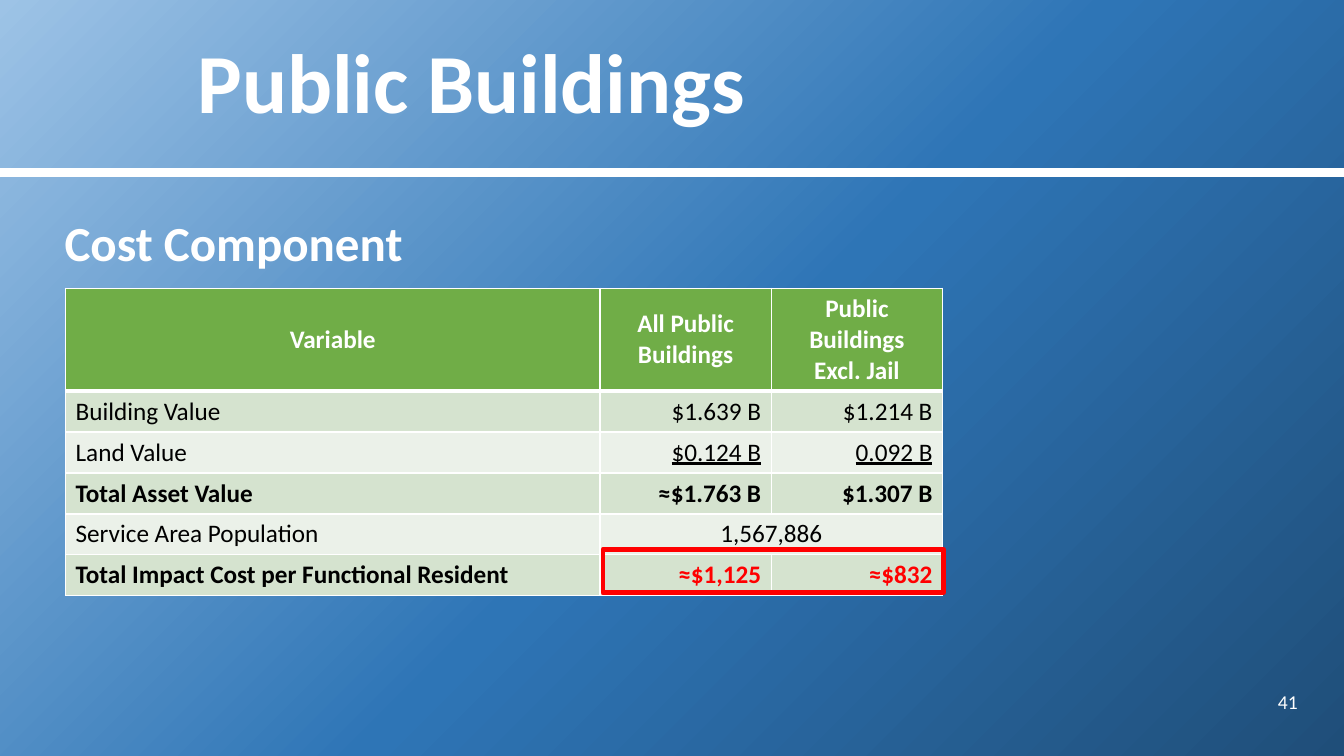
import pptx
import pptx.util
import pptx.oxml
import pptx.oxml.ns
import pptx.dml.color
import pptx.enum.shapes
import pptx.enum.text

Align = pptx.enum.text.PP_ALIGN
Anchor = pptx.enum.text.MSO_ANCHOR
Pt = pptx.util.Pt
NAMESPACES = pptx.oxml.ns.nsdecls("a")

COLORS = {
    "white": "FFFFFF", "black": "000000", "red": "FF0000",
    "header": "70AD47", "band_dark": "D5E3CF", "band_light": "EBF1E9",
    "sky": "9DC3E6", "blue": "2E75B6", "navy": "1F4E79",
}

COLUMN_SHARES = [39.76, 12.75, 12.75]
ROW_SHARES = [13.6] + [5.42] * 5
COST_ROWS = [
    ["Variable", "All Public Buildings", "Public Buildings\nExcl. Jail"],
    ["Building Value", "$1.639 B", "$1.214 B"],
    ["Land Value", "$0.124 B", "0.092 B"],
    ["Total Asset Value", "≈$1.763 B", "$1.307 B"],
    ["Service Area Population", "1,567,886", ""],
    ["Total Impact Cost per Functional Resident", "≈$1,125", "≈$832"],
]
HEADER_ROW, LAND_ROW, ASSET_ROW, POPULATION_ROW, IMPACT_ROW = 0, 2, 3, 4, 5


def rgb(name):
    return pptx.dml.color.RGBColor.from_string(COLORS[name])


class SlideBuilder:
    font = "Calibri"

    def __init__(self, deck):
        self.width, self.height = deck.slide_width, deck.slide_height
        self.page = deck.slides.add_slide(deck.slide_layouts[1])

    def across(self, share):
        return round(self.width * share / 100)

    def down(self, share):
        return round(self.height * share / 100)

    def area(self, left, top, width, height):
        return self.across(left), self.down(top), self.across(width), self.down(height)

    def background(self, stops):
        self.page.background.fill.solid()
        marks = "".join(
            f'<a:gs pos="{share * 1000}"><a:srgbClr val="{COLORS[name]}"/></a:gs>'
            for share, name in stops)
        gradient = pptx.oxml.parse_xml(
            f'<a:gradFill {NAMESPACES} rotWithShape="1"><a:gsLst>{marks}</a:gsLst>'
            '<a:path path="circle"><a:fillToRect r="100000" b="100000"/></a:path>'
            '</a:gradFill>')
        solid = self.page.element.find(".//" + pptx.oxml.ns.qn("a:solidFill"))
        solid.getparent().replace(solid, gradient)

    def set_text(self, frame, text, size, color="white", bold=False, align=Align.LEFT,
                 underline=False):
        frame.text = text
        for para in frame.paragraphs:
            para.alignment = align
            para.space_before = Pt(0)
            for span in para.runs:
                span.font.name = self.font
                span.font.size = Pt(size)
                span.font.bold = bold
                span.font.underline = underline
                span.font.color.rgb = rgb(color)

    def fill_placeholder(self, box, area, text, size, anchor, spacing):
        box.left, box.top, box.width, box.height = self.area(*area)
        frame = box.text_frame
        frame.auto_size = pptx.enum.text.MSO_AUTO_SIZE.NONE
        frame.word_wrap = True
        frame.vertical_anchor = anchor
        self.set_text(frame, text, size, bold=True)
        frame.paragraphs[0].line_spacing = spacing
        return frame.paragraphs[0]

    def title(self, area, text, size):
        para = self.fill_placeholder(self.page.shapes.title, area, text, size,
                                     Anchor.MIDDLE, 0.9)
        shadow = pptx.oxml.parse_xml(
            f'<a:effectLst {NAMESPACES}><a:outerShdw blurRad="38100" dist="38100" '
            'dir="2700000" algn="tl"><a:srgbClr val="000000"><a:alpha val="43000"/>'
            '</a:srgbClr></a:outerShdw></a:effectLst>')
        fill = para._p.find(".//" + pptx.oxml.ns.qn("a:solidFill"))
        fill.addnext(shadow)

    def heading(self, area, text, size):
        para = self.fill_placeholder(self.page.placeholders[1], area, text, size,
                                     Anchor.TOP, 1.2)
        properties = para._p.get_or_add_pPr()
        properties.set("marL", "0")
        properties.set("indent", "0")
        properties.append(pptx.oxml.parse_xml(f"<a:buNone {NAMESPACES}/>"))

    def label(self, area, text, size, align):
        frame = self.page.shapes.add_textbox(*self.area(*area)).text_frame
        frame.word_wrap = True
        frame.vertical_anchor = Anchor.MIDDLE
        self.set_text(frame, text, size, align=align)

    def rule(self, top, weight):
        line = self.page.shapes.add_connector(
            pptx.enum.shapes.MSO_CONNECTOR.STRAIGHT,
            0, self.down(top), self.width, self.down(top))
        line.line.color.rgb = rgb("white")
        line.line.width = Pt(weight)
        line._element.spPr.append(pptx.oxml.parse_xml(f"<a:effectLst {NAMESPACES}/>"))

    def frame(self, area, color, weight):
        box = self.page.shapes.add_shape(
            pptx.enum.shapes.MSO_SHAPE.RECTANGLE, *self.area(*area))
        box.shadow.inherit = False
        box.fill.background()
        box.line.color.rgb = rgb(color)
        box.line.width = Pt(weight)

    def borders(self, cell, row):
        weights = {"L": 1, "R": 1, "T": 3 if row == HEADER_ROW + 1 else 1,
                   "B": 3 if row == HEADER_ROW else 1}
        properties = cell._tc.get_or_add_tcPr()
        for side, weight in weights.items():
            properties.append(pptx.oxml.parse_xml(
                f'<a:ln{side} {NAMESPACES} w="{int(Pt(weight))}"><a:solidFill>'
                f'<a:srgbClr val="{COLORS["white"]}"/></a:solidFill></a:ln{side}>'))

    def cost_table(self, left, top, size):
        area = self.area(left, top, sum(COLUMN_SHARES), sum(ROW_SHARES))
        table = self.page.shapes.add_table(
            len(ROW_SHARES), len(COLUMN_SHARES), *area).table
        for column, share in zip(table.columns, COLUMN_SHARES):
            column.width = self.across(share)
        for row, share in zip(table.rows, ROW_SHARES):
            row.height = self.down(share)
        table.cell(POPULATION_ROW, 1).merge(table.cell(POPULATION_ROW, 2))
        for row, texts in enumerate(COST_ROWS):
            header = row == HEADER_ROW
            band = "header" if header else "band_dark" if row % 2 else "band_light"
            for column, text in enumerate(texts):
                cell = table.cell(row, column)
                self.borders(cell, row)
                cell.fill.solid()
                cell.fill.fore_color.rgb = rgb(band)
                cell.vertical_anchor = Anchor.MIDDLE if header else Anchor.TOP
                value = column > 0
                centered = header or (row == POPULATION_ROW and value)
                color = "white" if header else "black"
                if row == IMPACT_ROW and value:
                    color = "red"
                self.set_text(
                    cell.text_frame, text, size, color,
                    bold=row in (HEADER_ROW, ASSET_ROW, IMPACT_ROW),
                    align=Align.CENTER if centered else Align.RIGHT if value else Align.LEFT,
                    underline=row == LAND_ROW and value)


def main():
    deck = pptx.Presentation()
    deck.slide_width = pptx.util.Inches(13.33)
    deck.slide_height = pptx.util.Inches(7.5)
    slide = SlideBuilder(deck)
    slide.background([(0, "sky"), (53, "blue"), (100, "navy")])
    slide.rule(22.8, 6)
    slide.title((13.95, 0, 83.27, 22.8), "Public Buildings", 60)
    slide.label((90.62, 90.13, 6.68, 5.33), "41", 14, Align.RIGHT)
    slide.heading((4.05, 25.87, 93.17, 70.27), "Cost Component", 35)
    slide.cost_table(4.88, 38.13, 18)
    slide.frame((44.86, 72.67, 25.36, 5.73), "red", 3.25)
    deck.save("out.pptx")


if __name__ == "__main__":
    main()
